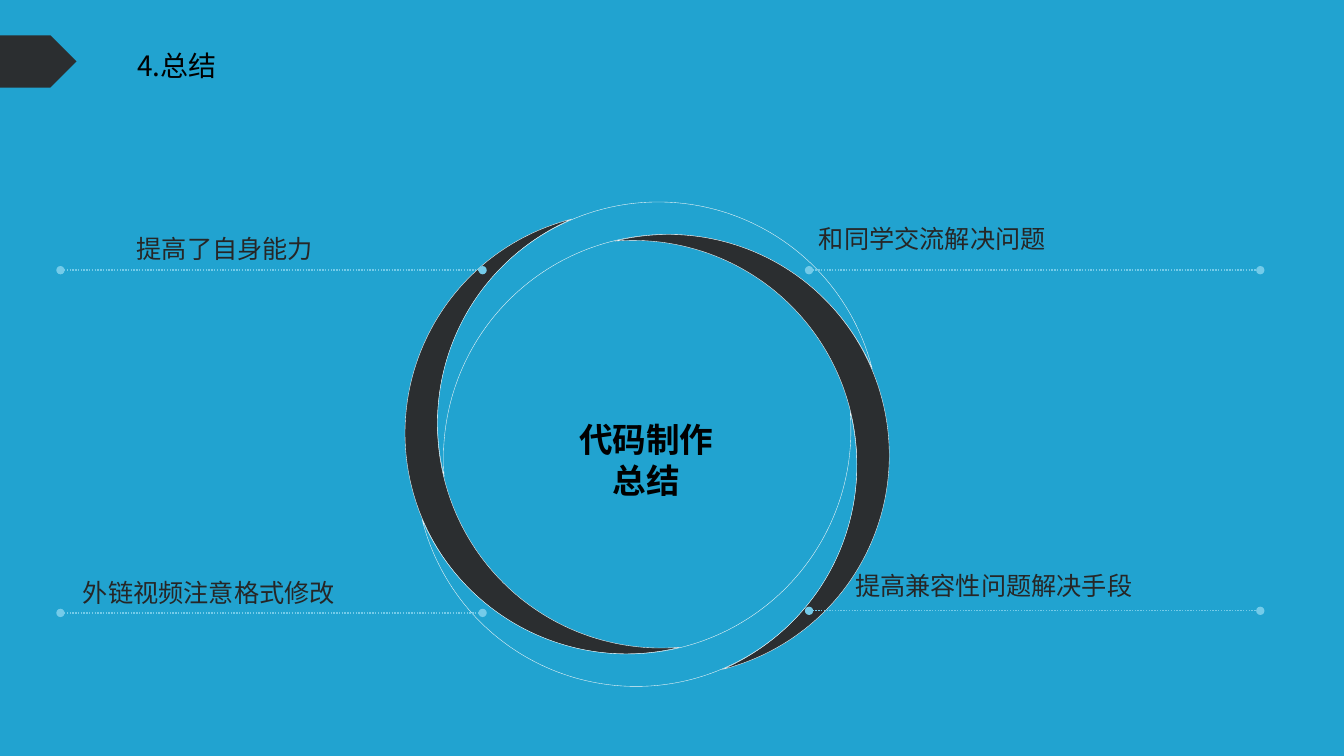
from lxml.etree import SubElement
from pptx import Presentation
from pptx.dml.color import RGBColor
from pptx.enum.dml import MSO_LINE
from pptx.enum.shapes import MSO_CONNECTOR, MSO_SHAPE
from pptx.enum.text import MSO_ANCHOR, MSO_AUTO_SIZE, PP_ALIGN
from pptx.oxml.ns import qn
from pptx.util import Pt

BLUE, DARK, PALE, SKY = "21A3D0", "2B2E30", "F8F8F8", "74CBE9"
BLACK, GREY = "000000", "262626"


def paint(color, value):
    color.rgb = RGBColor.from_string(value)


class SummarySlide:
    """Draws styled elements, measured in points, on one slide."""

    font = "Noto Sans CJK SC"

    def __init__(self, prs):
        self.s = prs.slides.add_slide(prs.slide_layouts[5])
        fill = self.s.background.fill
        fill.solid()
        paint(fill.fore_color, BLUE)

    def set_text(self, sp, text, size, color, align=PP_ALIGN.LEFT, bold=False):
        tf = sp.text_frame
        tf.word_wrap = True
        tf.auto_size = MSO_AUTO_SIZE.NONE
        tf.vertical_anchor = MSO_ANCHOR.TOP
        p = tf.paragraphs[0]
        p.alignment = align
        r = p.add_run()
        r.text = text
        r.font.size = Pt(size)
        r.font.bold = bold
        r.font.name = self.font
        paint(r.font.color, color)
        SubElement(r.font._element, qn("a:ea")).set("typeface", self.font)

    def title(self, x, y, w, h, text):
        sp = self.s.shapes.title
        sp.left, sp.top, sp.width, sp.height = Pt(x), Pt(y), Pt(w), Pt(h)
        self.set_text(sp, text, 20, BLACK)

    def text(self, x, y, w, h, text, size=18, color=GREY, **style):
        sp = self.s.shapes.add_textbox(Pt(x), Pt(y), Pt(w), Pt(h))
        self.set_text(sp, text, size, color, **style)

    def shape(self, kind, x, y, w, h, fill, adjust, line=None, rotation=0):
        sp = self.s.shapes.add_shape(kind, Pt(x), Pt(y), Pt(w), Pt(h))
        sp.shadow.inherit = False
        sp.adjustments[0] = adjust
        sp.rotation = rotation
        sp.fill.solid()
        paint(sp.fill.fore_color, fill)
        if line:
            paint(sp.line.color, line)
            sp.line.width = Pt(0.25)
        else:
            sp.line.fill.background()

    def dotted_line(self, x1, x2, y):
        c = self.s.shapes.add_connector(
            MSO_CONNECTOR.STRAIGHT, Pt(x1), Pt(y), Pt(x2), Pt(y))
        paint(c.line.color, SKY)
        c.line.width = Pt(1)
        c.line.dash_style = MSO_LINE.ROUND_DOT
        ln = c.line._get_or_add_ln()
        for end in ("a:headEnd", "a:tailEnd"):
            SubElement(ln, qn(end)).set("type", "oval")
        SubElement(c._element.spPr, qn("a:effectLst"))

    def ring(self, cx, cy, w, h):
        dx, dy = -91.8, 11.3
        for i in range(4):
            self.shape(MSO_SHAPE.MOON, cx + dx - w / 2, cy + dy - h / 2, w, h,
                       (DARK, BLUE)[i % 2], 0.152, PALE, (345.9 + 90 * i) % 360)
            dx, dy = -dy, dx


def main():
    prs = Presentation()
    prs.slide_width, prs.slide_height = Pt(960.5), Pt(540)
    slide = SummarySlide(prs)
    slide.title(90.7, 31, 72, 31.7, "4.总结")
    slide.ring(462.5, 317.3, 157.7, 315.4)
    slide.text(404.6, 295.9, 114.5, 65.5, "代码制作总结", 24, BLACK,
               align=PP_ALIGN.CENTER, bold=True)

    left, right = (43.2, 344.9), (578.2, 900.7)
    for text, x, y, (x1, x2), line_y in (
        ("和同学交流解决问题", 578.2, 156.2, right, 193),
        ("提高兼容性问题解决手段", 604.1, 403.9, right, 436.3),
        ("提高了自身能力", 90.7, 163.4, left, 193),
        ("外链视频注意格式修改", 52.2, 409, left, 437.8),
    ):
        slide.text(x, y, x2 - x, 28.8, text)
        slide.dotted_line(x1, x2, line_y)

    slide.shape(MSO_SHAPE.PENTAGON, 0, 25.2, 54.7, 37.4, DARK, 0.5)
    prs.save("out.pptx")


if __name__ == "__main__":
    main()
